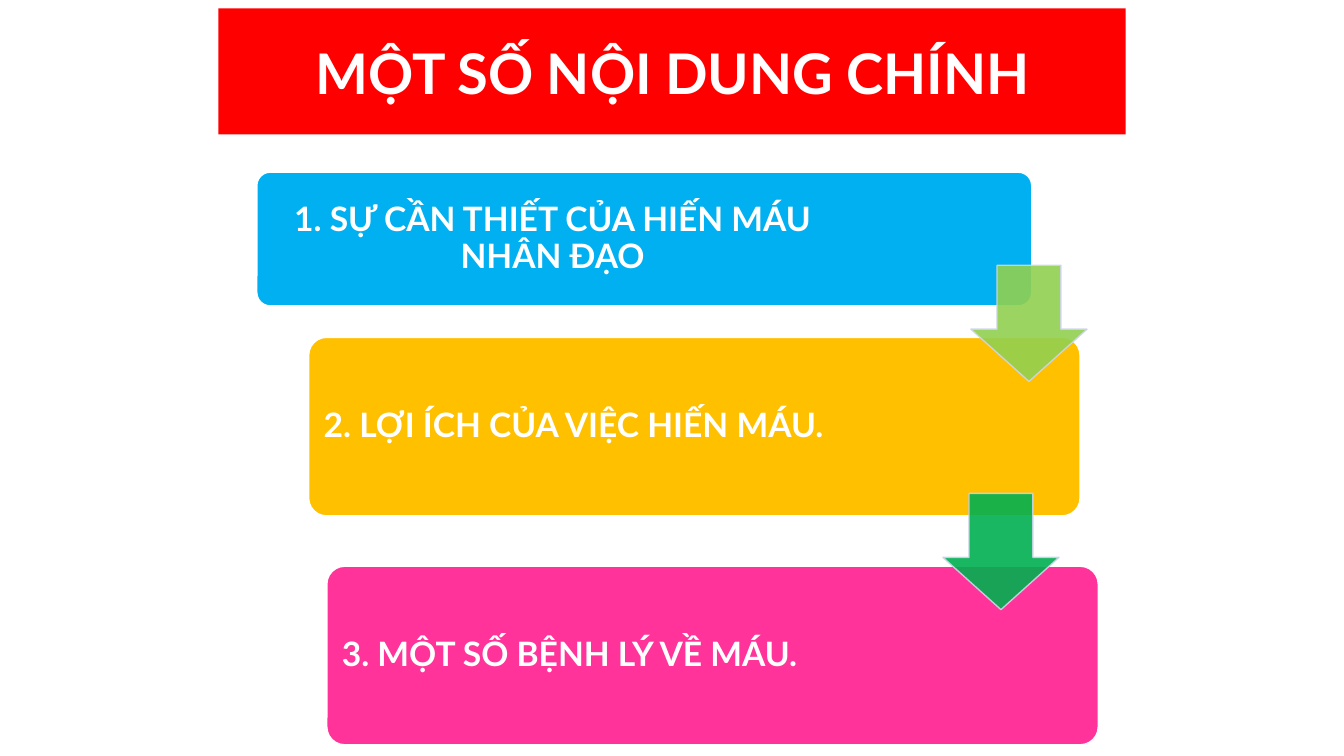
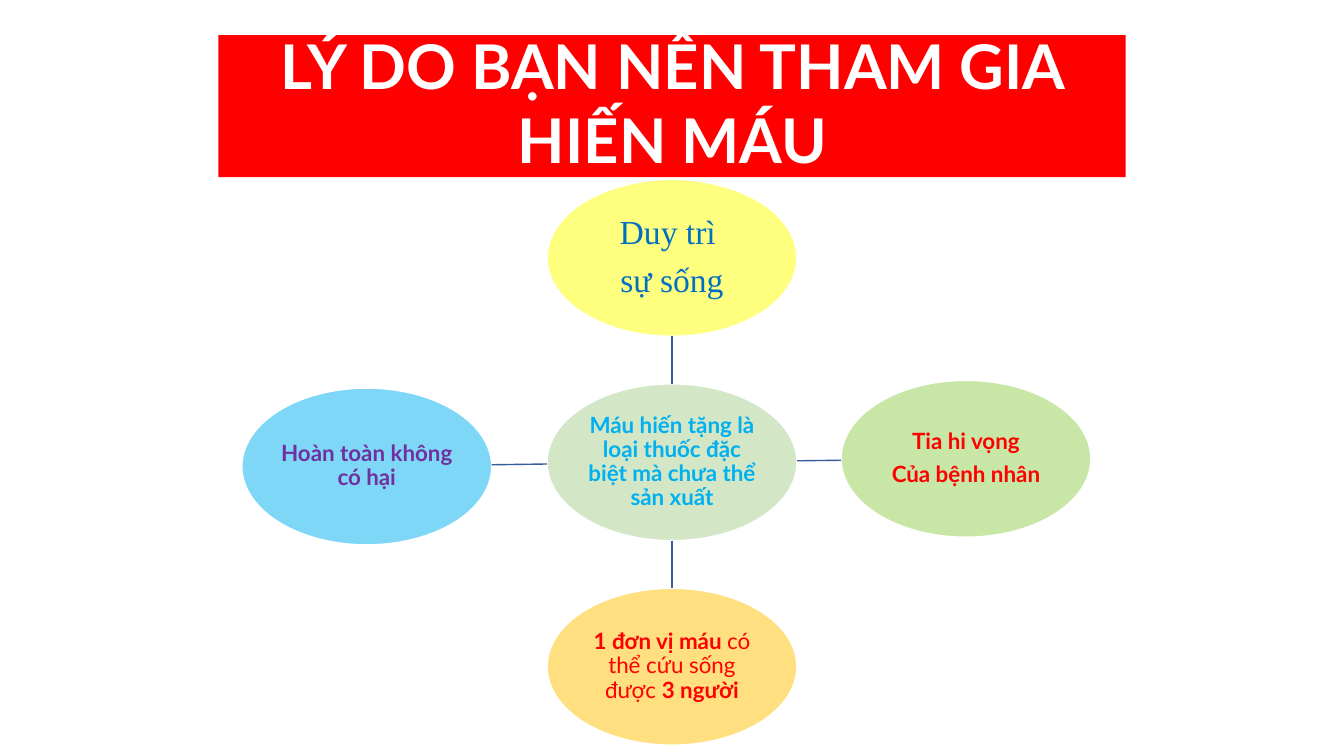
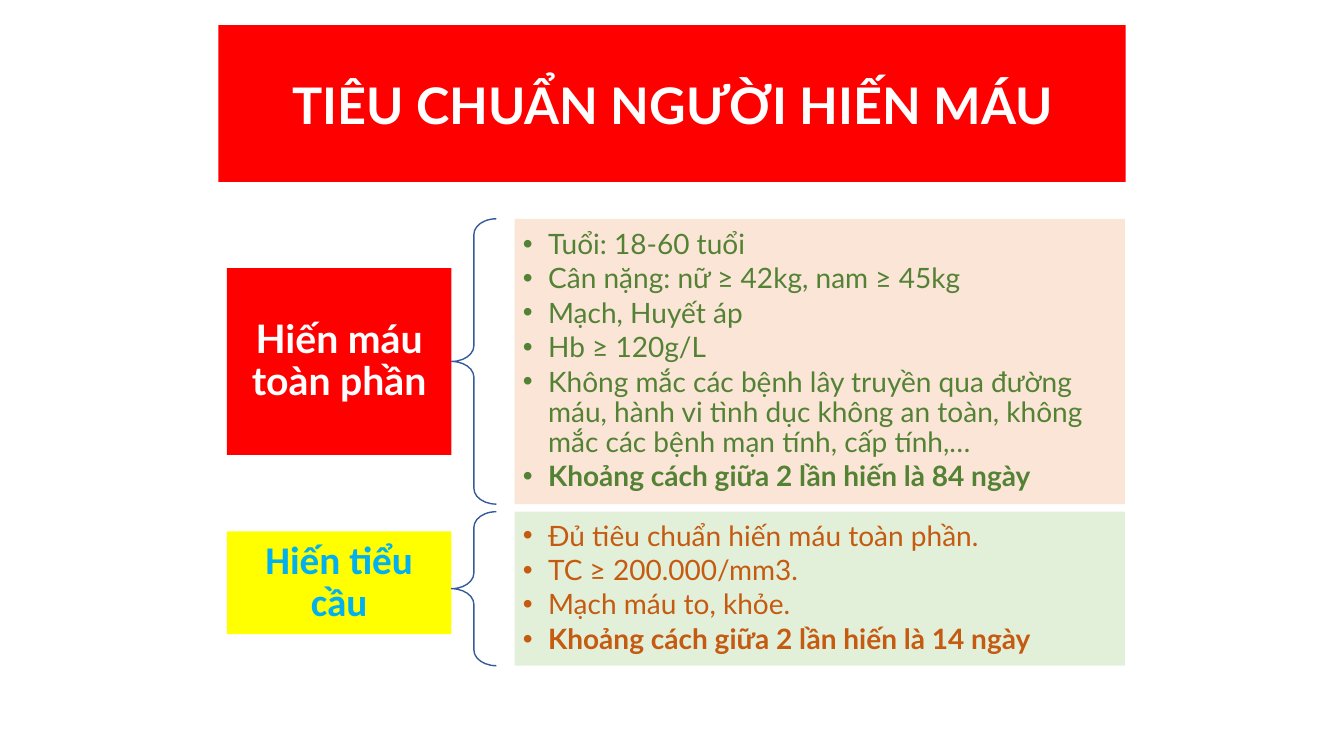
from math import hypot

from lxml.etree import SubElement
from pptx import Presentation
from pptx.dml.color import RGBColor
from pptx.enum.shapes import MSO_CONNECTOR, MSO_SHAPE
from pptx.enum.text import MSO_ANCHOR, MSO_AUTO_SIZE, PP_ALIGN
from pptx.oxml.ns import qn
from pptx.util import Pt

WHITE = RGBColor(0xFF, 0xFF, 0xFF)
RED = RGBColor(0xFF, 0x00, 0x00)
YELLOW = RGBColor(0xFF, 0xFF, 0x00)
SKY = RGBColor(0x00, 0xB0, 0xF0)
AMBER = RGBColor(0xFF, 0xC0, 0x00)
PINK = RGBColor(0xFF, 0x33, 0x99)
LIME = RGBColor(0x92, 0xD0, 0x50)
GREEN = RGBColor(0x00, 0xB0, 0x50)
SAGE = RGBColor(0xA9, 0xD1, 0x8E)
BLUE = RGBColor(0x00, 0x70, 0xC0)
PURPLE = RGBColor(0x70, 0x30, 0xA0)
NAVY = RGBColor(0x36, 0x5B, 0x9D)
PALE_BLUE = RGBColor(0xCF, 0xD5, 0xEA)
PEACH = RGBColor(0xFB, 0xE5, 0xD6)
MINT = RGBColor(0xE2, 0xF0, 0xD9)
MOSS = RGBColor(0x54, 0x82, 0x35)
RUST = RGBColor(0xC5, 0x5A, 0x11)
FONT = "Lato"
TITLE_ONLY, TWO_CONTENT = 5, 3
VOWELS = "aăâeêioôơuưy"
TONED_VOWELS = {
    0x300: "àằầèềìòồờùừỳ",
    0x301: "áắấéếíóốớúứý",
    0x309: "ảẳẩẻểỉỏổởủửỷ",
    0x303: "ãẵẫẽễĩõỗỡũữỹ",
    0x323: "ạặậẹệịọộợụựỵ",
}
TONE_MARKS = {
    ord(toned): vowel + chr(mark)
    for mark, row in TONED_VOWELS.items()
    for toned, vowel in zip(row + row.upper(), VOWELS + VOWELS.upper())
}


def write(sp, paragraphs, size=16, color=WHITE, bold=True, font=FONT, align=PP_ALIGN.CENTER,
          spacing=0.9, after=0.35, insets=(1, 1, 1, 1), bullet=False, combining=True):
    """Fill a shape with paragraphs, each a string or (text, bold) runs, tones combining or not."""
    tf = sp.text_frame
    tf.word_wrap, tf.auto_size = True, MSO_AUTO_SIZE.NONE
    tf.vertical_anchor = MSO_ANCHOR.MIDDLE
    tf.margin_left, tf.margin_top, tf.margin_right, tf.margin_bottom = map(Pt, insets)
    for i, runs in enumerate(paragraphs):
        p = tf.add_paragraph() if i else tf.paragraphs[0]
        p.alignment, p.line_spacing = align, spacing
        p.space_before, p.space_after = Pt(0), Pt(size * after)
        if bullet:
            add_bullet(p)
        for text, weight in [(runs, bold)] if isinstance(runs, str) else runs:
            r = p.add_run()
            r.text = text.translate(TONE_MARKS) if combining else text
            r.font.name, r.font.size, r.font.bold = font, Pt(size), weight
            r.font.color.rgb = color


def add_bullet(p):
    """Give a paragraph a round bullet with a hanging indent."""
    pPr = p._p.get_or_add_pPr()
    pPr.set("marL", str(Pt(18)))
    pPr.set("indent", str(-Pt(18)))
    SubElement(pPr, qn("a:buChar")).set("char", "•")


def place(sp, x, y, w, h):
    """Move and size a placeholder."""
    sp.left, sp.top, sp.width, sp.height = Pt(x), Pt(y), Pt(w), Pt(h)


def set_alpha(fill, percent):
    """Make a solid fill partly transparent."""
    color = fill._xPr.find(qn("a:solidFill"))[0]
    SubElement(color, qn("a:alpha")).set("val", str(percent * 1000))


def add_box(s, kind, x, y, w, h, fill=None, line=None, alpha=100, line_alpha=100, adjust=()):
    """Add a preset shape with flat colours."""
    sp = s.shapes.add_shape(kind, Pt(x), Pt(y), Pt(w), Pt(h))
    sp.shadow.inherit = False
    for i, value in enumerate(adjust):
        sp.adjustments[i] = value
    if fill is None:
        sp.fill.background()
    else:
        sp.fill.solid()
        sp.fill.fore_color.rgb = fill
        set_alpha(sp.fill, alpha)
    if line is None:
        sp.line.fill.background()
    else:
        sp.line.color.rgb = line
        sp.line.width = Pt(1)
        set_alpha(sp.line.fill, line_alpha)
    return sp


def add_link(s, x1, y1, x2, y2):
    """Add a thin straight line."""
    link = s.shapes.add_connector(MSO_CONNECTOR.STRAIGHT, Pt(x1), Pt(y1), Pt(x2), Pt(y2))
    link.line.color.rgb = NAVY
    link.line.width = Pt(1)
    SubElement(link._element.spPr, qn("a:effectLst"))


def add_slide(prs, layout, title, y, h, size, lift=0, combining=True):
    """Add a slide whose title is a red band."""
    s = prs.slides.add_slide(prs.slide_layouts[layout])
    sp = s.shapes.title
    place(sp, 156, y, 648, h)
    sp.fill.solid()
    sp.fill.fore_color.rgb = RED
    write(sp, [title], size=size, spacing=1.0, after=0, insets=(19, 1, 18, lift),
          combining=combining)
    return s


def add_contents(prs):
    """Build the staircase of main topics."""
    s = add_slide(prs, TITLE_ONLY, "MỘT SỐ NỘI DUNG CHÍNH", 6, 90, 40, combining=False)
    steps = [
        (183.5, 123, 553.5, 95.5, SKY, PP_ALIGN.CENTER, "1. SỰ CẦN THIẾT CỦA HIẾN MÁU NHÂN ĐẠO"),
        (220.5, 241, 551, 127.5, AMBER, PP_ALIGN.JUSTIFY, "2. LỢI ÍCH CỦA VIỆC HIẾN MÁU."),
        (233.5, 404.5, 551, 127.5, PINK, PP_ALIGN.JUSTIFY, "3. MỘT SỐ BỆNH LÝ VỀ MÁU."),
    ]
    for x, y, w, h, fill, align, text in steps:
        sp = add_box(s, MSO_SHAPE.ROUNDED_RECTANGLE, x, y, w, h, fill, WHITE, adjust=(0.1,))
        write(sp, [text], size=24, align=align, insets=(7, 7, 138, 7), combining=False)
    for x, y, fill in [(693.5, 189.5, LIME), (673.5, 352.5, GREEN)]:
        add_box(s, MSO_SHAPE.DOWN_ARROW, x, y, 83, 83, fill, PALE_BLUE,
                alpha=90, line_alpha=90, adjust=(0.55, 0.45))


def add_reasons(prs):
    """Build the hub with four reasons around it."""
    s = add_slide(prs, TITLE_ONLY, "LÝ DO BẠN NÊN THAM GIA HIẾN MÁU", 25, 101.5, 44, lift=7)
    w, h, hub_x, hub_y = 178.5, 112, 480, 330.2

    def add_node(dx, dy, fill, paragraphs, **fmt):
        """Add an ellipse at an offset from the hub, linked to it."""
        x, y = hub_x + dx, hub_y + dy
        sp = add_box(s, MSO_SHAPE.OVAL, x - w / 2, y - h / 2, w, h, fill, WHITE, alpha=50)
        write(sp, paragraphs, **fmt)
        if dx or dy:
            k = 0.5 / hypot(dx / w, dy / h)
            add_link(s, hub_x + k * dx, hub_y + k * dy, x - k * dx, y - k * dy)

    add_node(0, 0, SAGE, ["Máu hiến tặng là loại thuốc đặc biệt mà chưa thể sản xuất"], color=SKY)
    add_node(0, -146, YELLOW, ["Duy trì ", "sự sống"], size=24, color=BLUE, bold=False,
             font="Times New Roman", combining=False)
    add_node(210, -2.5, LIME, ["Tia hi vọng", "Của bệnh nhân"], color=RED, combining=False)
    add_node(0, 146, AMBER, [[("1 đơn vị máu ", True), ("có thể cứu sống được ", False),
                              ("3 người", True)]], color=RED)
    add_node(-218, 3, SKY, ["Hoàn toàn không có hại"], color=PURPLE)


def add_criteria(prs):
    """Build the donor criteria, one braced list per kind of donation."""
    s = add_slide(prs, TWO_CONTENT, "TIÊU CHUẨN NGƯỜI HIẾN MÁU", 18, 112, 36)
    whole_blood = [
        "Tuổi: 18-60 tuổi",
        "Cân nặng: nữ ≥ 42kg, nam ≥ 45kg",
        "Mạch, Huyết áp",
        "Hb ≥ 120g/L",
        "Không mắc các bệnh lây truyền qua đường máu, hành vi tình dục không an toàn, "
        "không mắc các bệnh mạn tính, cấp tính,…",
        [("Khoảng cách giữa 2 lần hiến là 84 ngày", True)],
    ]
    platelets = [
        "Đủ tiêu chuẩn hiến máu toàn phần.",
        "TC ≥ 200.000/mm3.",
        "Mạch máu to, khỏe.",
        [("Khoảng cách giữa 2 lần hiến là 14 ngày", True)],
    ]
    groups = [
        ("Hiến máu toàn phần", 191.5, 133.5, RED, WHITE, FONT, whole_blood, 156.3, 203.8, PEACH, MOSS),
        ("Hiến tiểu cầu", 379.5, 73.5, YELLOW, SKY, "Calibri", platelets, 365.5, 110, MINT, RUST),
    ]
    bodies = list(s.placeholders)[1:]
    for body, group in zip(bodies, groups):
        label, label_y, label_h, fill, color, font, items, y, h, back, ink = group
        sp = add_box(s, MSO_SHAPE.RECTANGLE, 162, label_y, 160.5, label_h, fill)
        write(sp, [label], size=28, color=color, font=font, insets=(16, 6, 16, 6))
        add_box(s, MSO_SHAPE.LEFT_BRACE, 322.5, y, 32, h, line=NAVY, adjust=(0.35, 0.5))
        place(body, 367.5, y, 436, h)
        body.fill.solid()
        body.fill.fore_color.rgb = back
        write(body, items, size=20, color=ink, bold=False, align=PP_ALIGN.LEFT,
              after=0.15, insets=(6, 6, 6, 6), bullet=True)


def main():
    """Build and save the presentation."""
    prs = Presentation()
    prs.slide_width, prs.slide_height = Pt(960), Pt(540)
    add_contents(prs)
    add_reasons(prs)
    add_criteria(prs)
    prs.save("out.pptx")


if __name__ == "__main__":
    main()
